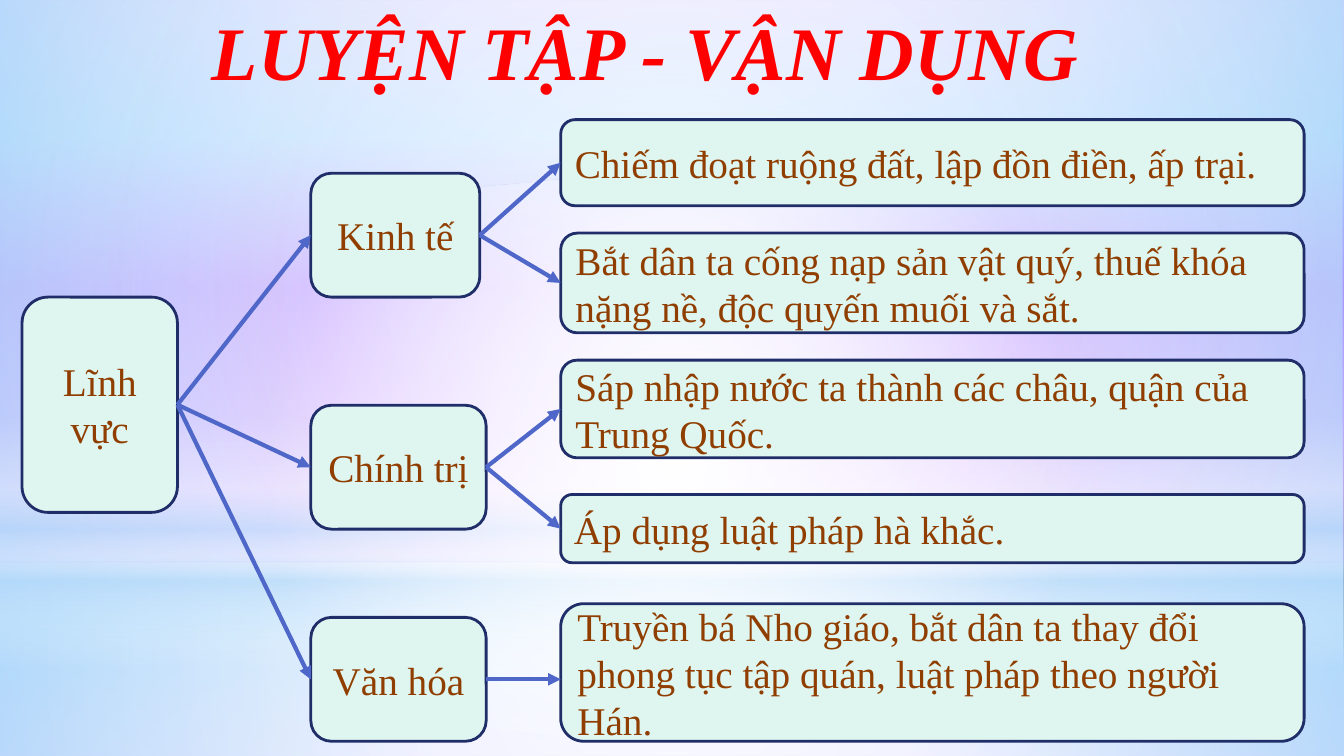
"""Build the review slide: a tree of policies by field."""
import pptx
import pptx.dml.color
import pptx.enum.shapes
import pptx.enum.text
import pptx.oxml.ns
import pptx.util
from lxml import etree

RGBColor = pptx.dml.color.RGBColor
SHAPES = pptx.enum.shapes.MSO_SHAPE
ALIGN = pptx.enum.text.PP_ALIGN
ANCHOR = pptx.enum.text.MSO_ANCHOR

PX = 9525
SLIDE_BOX = (0, 0, 1280, 720)
FONT = "Times New Roman"
MINT = RGBColor(0xDF, 0xF5, 0xEF)
NAVY = RGBColor(0x1F, 0x2E, 0x69)
BLUE = RGBColor(0x4E, 0x67, 0xC8)
BROWN = RGBColor(0x90, 0x3E, 0x00)
RED = RGBColor(0xFF, 0x00, 0x00)
WHITE = RGBColor(0xFF, 0xFF, 0xFF)
SKY = RGBColor(0xB4, 0xDC, 0xFA)
LAVENDER = RGBColor(0xCC, 0xCC, 0xFF)
LIGHT_BLUE = RGBColor(0x99, 0xCC, 0xFF)
VIOLET = RGBColor(0x99, 0x66, 0xFF)
LILAC = RGBColor(0xCC, 0x99, 0xFF)

BACKDROP = [(0, LAVENDER, 100), (18, LIGHT_BLUE, 100), (38, VIOLET, 100),
            (66, LILAC, 100), (82, LIGHT_BLUE, 100), (100, LAVENDER, 100)]
GLOWS = [
    (SHAPES.RECTANGLE, 536, 184, True,
     [(0, WHITE, 91), (37, WHITE, 76), (100, SKY, 79)]),
    (SHAPES.RECTANGLE, 0, 536, True,
     [(0, WHITE, 89), (48, WHITE, 62), (100, SKY, 79)]),
    (SHAPES.RECTANGLE, 396, 240, False,
     [(0, WHITE, 0), (29, WHITE, 30), (45, SKY, 40),
      (55, WHITE, 26), (65, SKY, 60), (100, WHITE, 0)]),
    (SHAPES.OVAL, 168, 536, True, [(0, WHITE, 100), (56, WHITE, 0)]),
]

BRANCH_HEIGHT = 118
BRANCHES = [
    ("Kinh tế", 51, 161, [
        ("Chiếm đoạt ruộng đất, lập đồn điền, ấp trại.", 0, 82),
        ("Bắt dân ta cống nạp sản vật quý, thuế khóa nặng nề, "
         "độc quyến muối và sắt.", 108, 95)]),
    ("Chính trị", 272, 167, [
        ("Sáp nhập nước ta thành các châu, quận của Trung Quốc.", 229, 93),
        ("Áp dụng luật pháp hà khắc.", 357, 65)]),
    ("Văn hóa", 474, 167, [
        ("Truyền bá Nho giáo, bắt dân ta thay đổi phong tục tập quán, "
         "luật pháp theo người Hán.", 461, 131)]),
]


def emu(*lengths):
    """Turn px lengths into EMU."""
    return [pptx.util.Emu(length * PX) for length in lengths]


def add_xml(parent, tag, **attributes):
    """Append a DrawingML element."""
    element = etree.SubElement(parent, pptx.oxml.ns.qn(tag))
    for name, value in attributes.items():
        element.set(name, str(value))
    return element


def paint_gradient(fill, owner, stops, radial):
    """Give a fill its colour stops, from the centre or from the top."""
    fill.gradient()
    gradient = owner.find(".//" + pptx.oxml.ns.qn("a:gradFill"))
    for child in list(gradient):
        gradient.remove(child)
    stop_list = add_xml(gradient, "a:gsLst")
    for position, color, opacity in stops:
        stop = add_xml(stop_list, "a:gs", pos=position * 1000)
        tint = add_xml(stop, "a:srgbClr", val=color)
        if opacity < 100:
            add_xml(tint, "a:alpha", val=opacity * 1000)
    if radial:
        circle = add_xml(gradient, "a:path", path="circle")
        add_xml(circle, "a:fillToRect", l=50000, t=50000, r=50000, b=50000)
    else:
        add_xml(gradient, "a:lin", ang=5400000, scaled=0)


def add_backdrop(slide, box):
    """Paint the background and the soft glows over it."""
    left, top, width, _ = box
    paint_gradient(slide.background.fill, slide._element, BACKDROP, False)
    for kind, offset, height, radial, stops in GLOWS:
        glow = slide.shapes.add_shape(kind, *emu(left, top + offset, width, height))
        glow.shadow.inherit = False
        glow.line.fill.background()
        paint_gradient(glow.fill, glow._element, stops, radial)


def format_text(shape, text, size, color, alignment):
    """Write one paragraph and set its font."""
    shape.text_frame.text = text
    paragraph = shape.text_frame.paragraphs[0]
    paragraph.alignment = alignment
    font = paragraph.runs[0].font
    font.name, font.size = FONT, pptx.util.Pt(size)
    font.color.rgb = color
    return font


def add_title(slide, box):
    """Place the slide title in front of the backdrop."""
    title = slide.shapes.title
    slide.shapes._spTree.append(title._element)
    title.left, title.top, title.width, title.height = emu(*box)
    font = format_text(title, "LUYỆN TẬP - VẬN DỤNG", 54, RED, ALIGN.CENTER)
    font.bold = font.italic = True
    frame = title.text_frame
    frame.word_wrap = False
    frame.auto_size = pptx.enum.text.MSO_AUTO_SIZE.NONE
    frame.vertical_anchor = ANCHOR.TOP


def add_node(slide, box, text, alignment=ALIGN.CENTER):
    """Add a rounded box with text."""
    node = slide.shapes.add_shape(SHAPES.ROUNDED_RECTANGLE, *emu(*box))
    node.shadow.inherit = False
    node.fill.solid()
    node.fill.fore_color.rgb = MINT
    node.line.color.rgb = NAVY
    node.line.width = pptx.util.Pt(2)
    node.text_frame.word_wrap = True
    node.text_frame.vertical_anchor = ANCHOR.MIDDLE
    format_text(node, text, 28, BROWN, alignment)
    return node


def add_arrow(slide, source, target, level=False):
    """Point from the right of one node to the left of another."""
    start_y = source.top + source.height // 2
    end_y = start_y if level else target.top + target.height // 2
    arrow = slide.shapes.add_connector(
        pptx.enum.shapes.MSO_CONNECTOR.STRAIGHT,
        source.left + source.width, start_y, target.left, end_y)
    arrow.line.color.rgb = BLUE
    arrow.line.width = pptx.util.Pt(3)
    add_xml(arrow.line._get_or_add_ln(), "a:tailEnd", type="triangle")
    add_xml(arrow._element.spPr, "a:effectLst")


def add_tree(slide, box):
    """Draw the root, its branches and their details."""
    left, top, width, _ = box
    root = add_node(slide, (left, top + 169, 148, 205), "Lĩnh vực")
    for name, offset, branch_width, details in BRANCHES:
        branch = add_node(
            slide, (left + 275, top + offset, branch_width, BRANCH_HEIGHT), name)
        add_arrow(slide, root, branch)
        for text, detail_offset, height in details:
            detail_box = (left + 513, top + detail_offset, width - 513, height)
            detail = add_node(slide, detail_box, text, ALIGN.LEFT)
            add_arrow(slide, branch, detail, level=len(details) == 1)


def main():
    """Build and save the presentation."""
    presentation = pptx.Presentation()
    presentation.slide_width, presentation.slide_height = emu(*SLIDE_BOX[2:])
    slide = presentation.slides.add_slide(presentation.slide_layouts[5])
    add_backdrop(slide, SLIDE_BOX)
    add_tree(slide, (21, 114, 1221, 592))
    add_title(slide, (174, 0, 881, 97))
    presentation.save("out.pptx")


if __name__ == "__main__":
    main()
